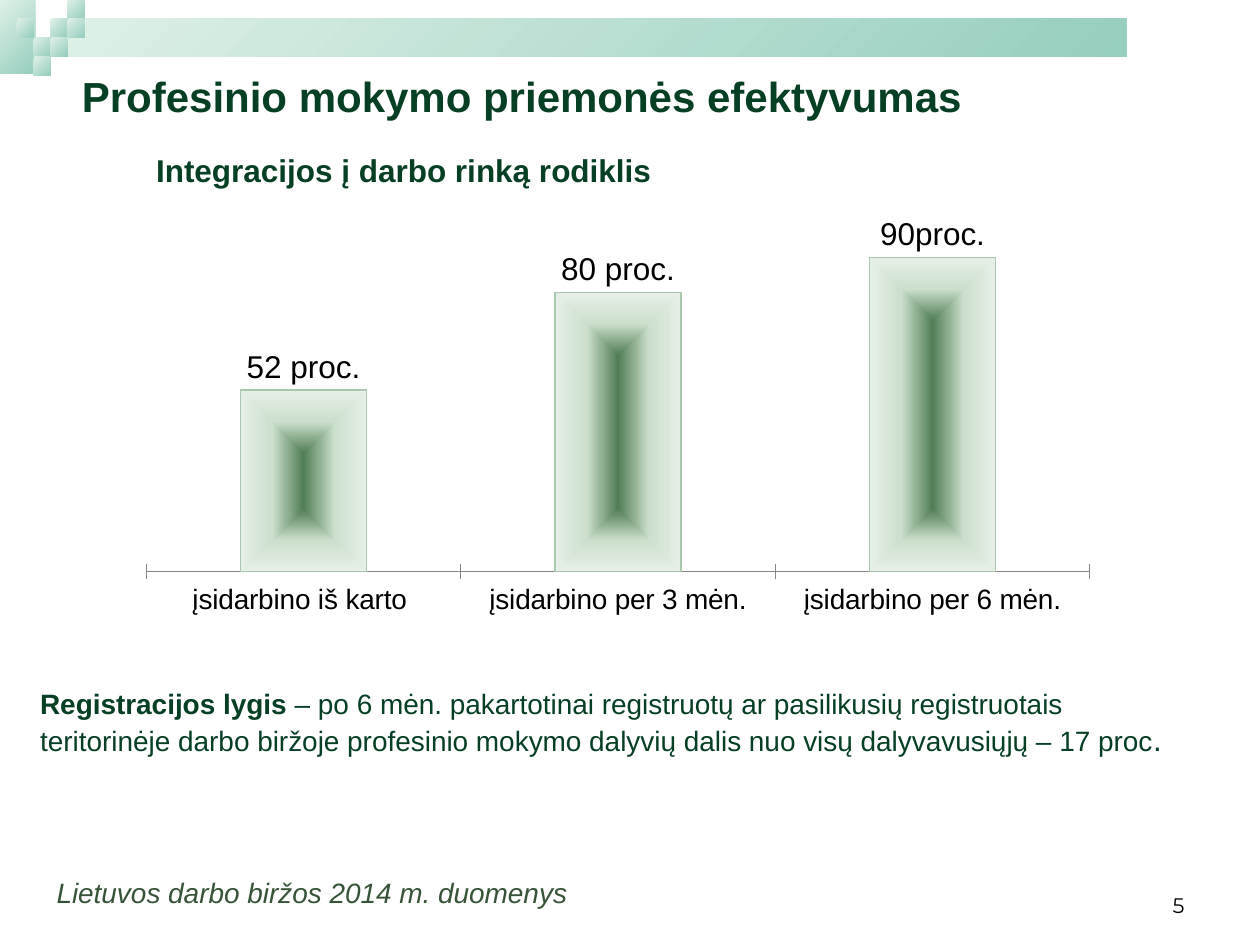
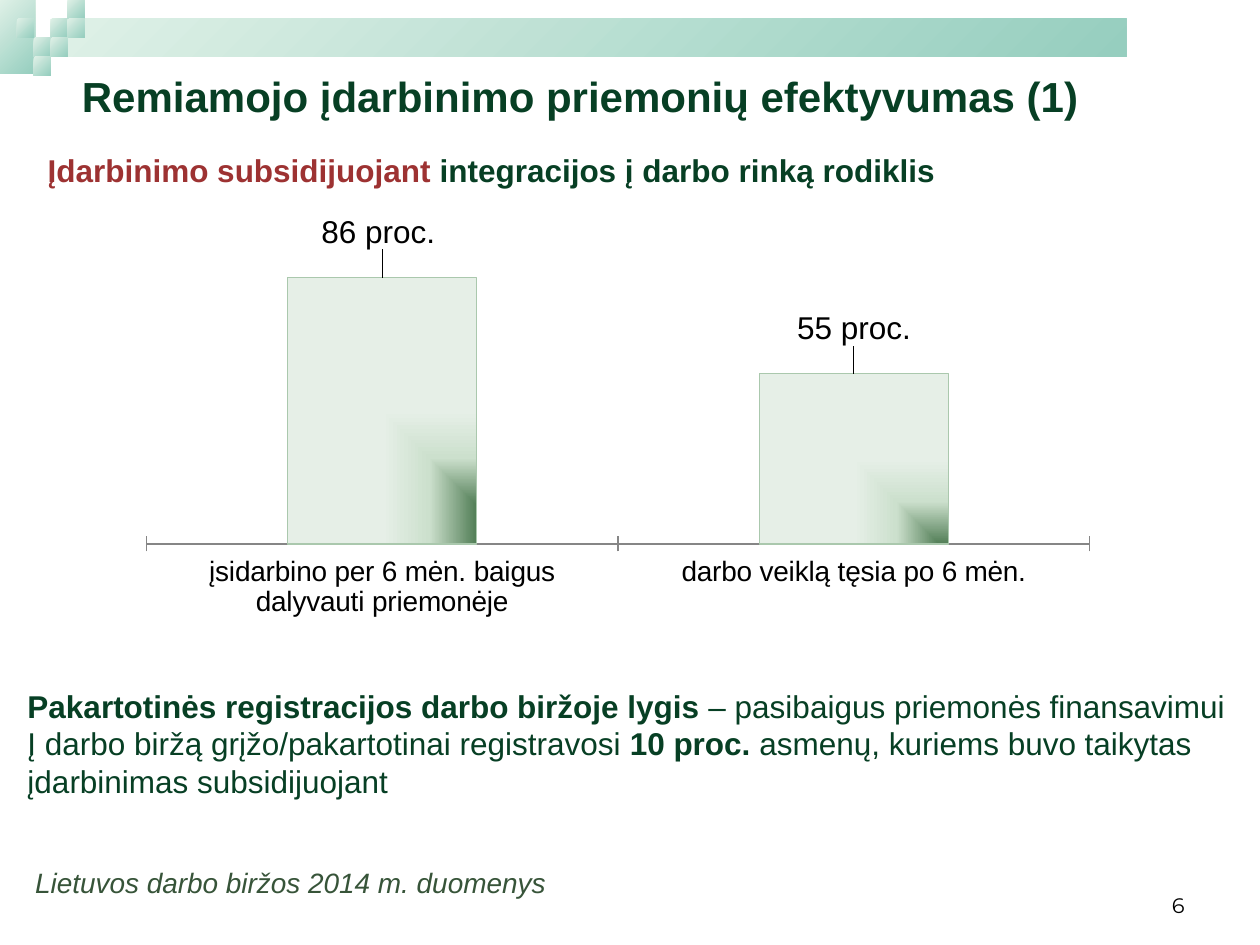
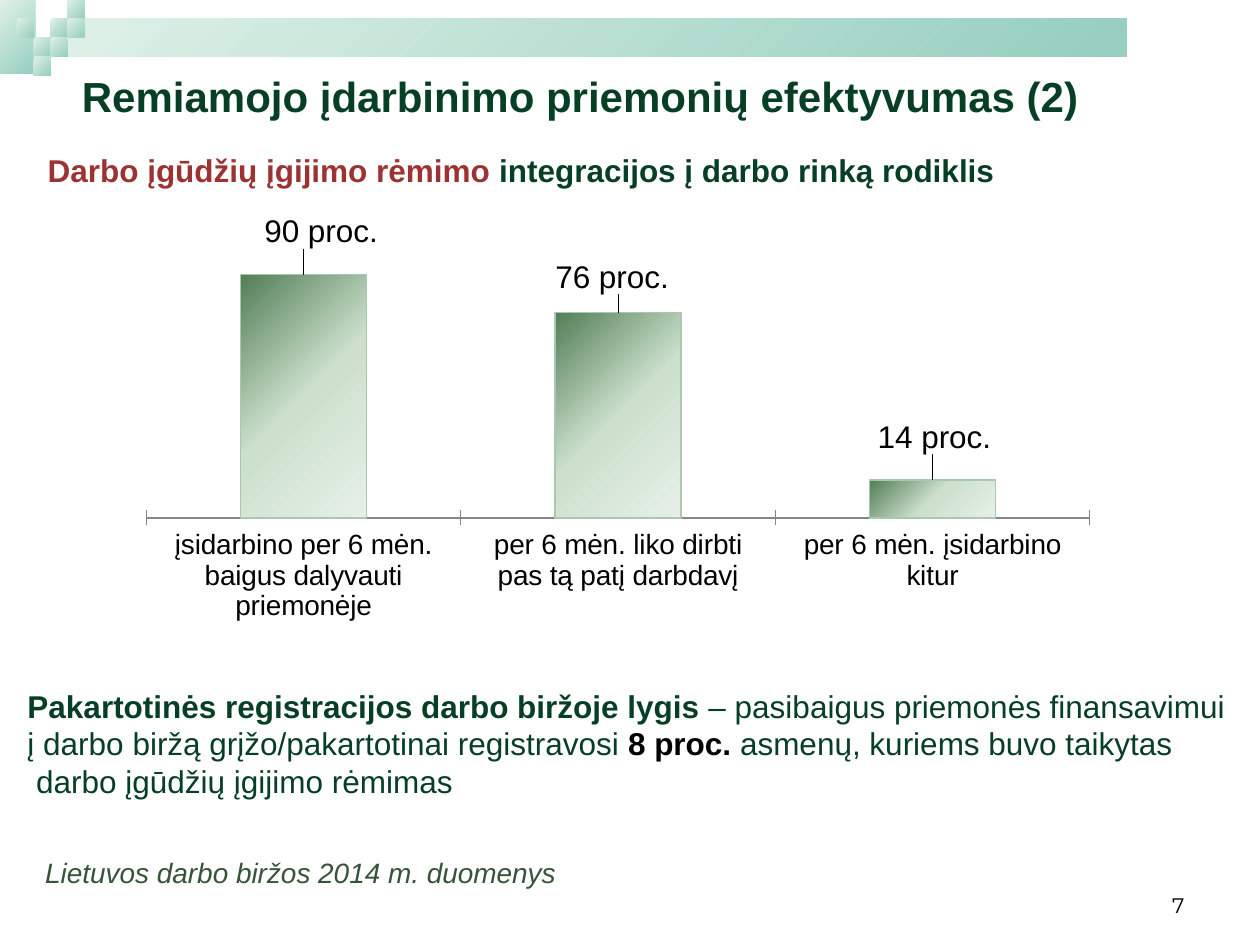
import pptx
import pptx.chart.data
import pptx.dml.color
import pptx.enum.chart
import pptx.enum.shapes
import pptx.enum.text
import pptx.oxml
import pptx.oxml.ns
import pptx.util

RGBColor = pptx.dml.color.RGBColor
Pt = pptx.util.Pt
qn = pptx.oxml.ns.qn

DARK_GREEN = RGBColor(0x07, 0x3F, 0x24)
SOURCE_GREEN = RGBColor(0x37, 0x54, 0x39)
RED = RGBColor(0x9D, 0x32, 0x32)
BLACK = RGBColor(0, 0, 0)
AXIS_GRAY = RGBColor(0x86, 0x86, 0x86)
BAR_LINE = RGBColor(0xAA, 0xC8, 0xAD)
BAND_STOPS = [(0, RGBColor(0xDF, 0xF1, 0xE7)), (100, RGBColor(0x96, 0xCE, 0xBF))]
BAR_STOPS = [(0, RGBColor(0x52, 0x7E, 0x56)), (50, RGBColor(0xCC, 0xE0, 0xCD)),
             (100, RGBColor(0xE6, 0xEF, 0xE7))]

DIAGONAL = '<a:lin ang="2700000" scaled="0"/>'
FROM_CENTRE = ('<a:path path="shape"><a:fillToRect l="50000" t="50000" '
               'r="50000" b="50000"/></a:path>')
FROM_CORNER = '<a:path path="rect"><a:fillToRect l="100000" t="100000"/></a:path>'
NO_LEADER_LINES = (
    f'<c:extLst {pptx.oxml.ns.nsdecls("c")}>'
    '<c:ext uri="{CE6537A1-D6FC-4f65-9D91-7224C49458BB}" '
    'xmlns:c15="http://schemas.microsoft.com/office/drawing/2012/chart">'
    '<c15:showLeaderLines val="0"/></c:ext></c:extLst>')

FONT = "Arial"
COLUMNS, ROWS = 100, 75
FIRST_NUMBER = 5
SOURCE = "Lietuvos darbo biržos 2014 m. duomenys"
INDICATOR = "integracijos į darbo rinką rodiklis"
BOLD = {"bold": True}


def paint_gradient(owner, fill, stops, shade):
    """Fill a part of owner (shape or chart) with stops along the given shade."""
    fill.gradient()
    gradient = next(owner.element.iter(qn("a:gradFill")))
    colours = "".join(f'<a:gs pos="{pos * 1000}"><a:srgbClr val="{rgb}"/></a:gs>'
                      for pos, rgb in stops)
    gradient.getparent().replace(gradient, pptx.oxml.parse_xml(
        f'<a:gradFill {pptx.oxml.ns.nsdecls("a")} rotWithShape="1">'
        f'<a:gsLst>{colours}</a:gsLst>{shade}</a:gradFill>'))


def manual_layout(target="", **percents):
    """Return a chart layout; values are percents of the chart's size."""
    parts = "".join(f'<c:{name} val="{percent / 100:.4f}"/>'
                    for name, percent in percents.items())
    return pptx.oxml.parse_xml(f'<c:layout {pptx.oxml.ns.nsdecls("c")}>'
                               f'<c:manualLayout>{target}{parts}</c:manualLayout></c:layout>')


def style_font(font, size=None, color=None, bold=None, italic=None, name=None):
    if size:
        font.size = Pt(size)
    if color is not None:
        font.color.rgb = color
    if name:
        font.name = name
    if bold is not None:
        font.bold = bold
    if italic is not None:
        font.italic = italic


class Deck:
    def __init__(self):
        self.prs = pptx.Presentation()
        self.prs.slide_width = pptx.util.Inches(10)
        self.prs.slide_height = pptx.util.Inches(7.5)
        self.layout = self.prs.slide_layouts[5]
        title = self.layout.placeholders[0]
        title.left, title.top, title.width, title.height = self.box(5.5, 4.45, 84.4, 6.3)
        self.s = None

    def box(self, col, row, cols, rows):
        dx, dy = self.prs.slide_width / COLUMNS, self.prs.slide_height / ROWS
        return int(col * dx), int(row * dy), int(cols * dx), int(rows * dy)

    def slide(self, title):
        self.s = self.prs.slides.add_slide(self.layout)
        number = FIRST_NUMBER + len(self.prs.slides) - 1
        if number == FIRST_NUMBER:
            self.band()
        tf = self.s.shapes.title.text_frame
        tf.text = title
        tf.auto_size = pptx.enum.text.MSO_AUTO_SIZE.NONE
        tf.vertical_anchor = pptx.enum.text.MSO_ANCHOR.MIDDLE
        p = tf.paragraphs[0]
        p.alignment = pptx.enum.text.PP_ALIGN.LEFT
        style_font(p.font, 24, DARK_GREEN, bold=True, name=FONT)
        tf = self.text((71.7, 68.3, 23.3, 5), [[str(number)]], grow=False,
                       size=12, color=BLACK, name="Montserrat")
        tf.vertical_anchor = pptx.enum.text.MSO_ANCHOR.BOTTOM
        tf.paragraphs[0].alignment = pptx.enum.text.PP_ALIGN.RIGHT

    def band(self):
        """Draw the top band and its mosaic, then move them to the shared layout."""
        cell_w, cell_h = 1.34, 1.5
        mosaic = [(3, 1), (4, 0), (4, 1), (2, 2), (1, 1), (3, 2), (2, 3)]
        boxes = [(0, 0, 2.8, 5.8), (4, 1.5, 85.4, 3)]
        boxes += [(c * cell_w, r * cell_h, cell_w, cell_h) for c, r in mosaic]
        for index, place in enumerate(boxes):
            sp = self.s.shapes.add_shape(pptx.enum.shapes.MSO_SHAPE.RECTANGLE,
                                         *self.box(*place))
            sp.shadow.inherit = False
            sp.line.fill.background()
            paint_gradient(sp, sp.fill, BAND_STOPS, DIAGONAL)
            self.layout.shapes.element.insert(2 + index, sp.element)

    def text(self, place, lines, grow=True, indents=(), **style):
        """Add lines of runs; a run is a string or a (string, font style) pair."""
        tf = self.s.shapes.add_textbox(*self.box(*place)).text_frame
        tf.word_wrap = not grow
        if grow:
            tf.auto_size = pptx.enum.text.MSO_AUTO_SIZE.SHAPE_TO_FIT_TEXT
        for index, line in enumerate(lines):
            p = tf.add_paragraph() if index else tf.paragraphs[0]
            if index in indents:
                p._p.get_or_add_pPr().set("marL", str(Pt(5)))
            style_font(p.font, **{"name": FONT, "color": DARK_GREEN, **style})
            for run in line:
                text, override = (run, {}) if isinstance(run, str) else run
                r = p.add_run()
                r.text = text
                style_font(r.font, **override)
        return tf

    def source(self, col, row):
        self.text((col, row, 43.1, 3.7), [[SOURCE]],
                  size=16, color=SOURCE_GREEN, italic=True)

    def chart(self, bars, shade, plot_top, plot_height):
        """Draw columns from (category, value, label, label shift) rows."""
        data = pptx.chart.data.CategoryChartData()
        data.categories = [bar[0] for bar in bars]
        data.add_series("Series 1", [bar[1] for bar in bars])
        enum = pptx.enum.chart
        chart = self.s.shapes.add_chart(enum.XL_CHART_TYPE.COLUMN_CLUSTERED,
                                        *self.box(10.1, 17, 78, 32.4), data).chart
        style_font(chart.font, 18, BLACK, name=FONT)
        chart.has_legend = chart.has_title = False

        values, categories = chart.value_axis, chart.category_axis
        values.minimum_scale, values.maximum_scale = 0, 100
        values.has_major_gridlines = values.visible = False
        categories.major_tick_mark = enum.XL_TICK_MARK.CROSS
        categories.format.line.color.rgb = AXIS_GRAY
        categories.format.line.width = Pt(0.75)
        style_font(categories.tick_labels.font, 16, BLACK, name=FONT)

        plot = chart.plots[0]
        plot.gap_width, plot.vary_by_categories = 150, False
        series = plot.series[0]
        paint_gradient(chart, series.format.fill, BAR_STOPS, shade)
        series.format.line.color.rgb = BAR_LINE
        series.format.line.width = Pt(0.75)
        self.bar_labels(chart, series, bars)

        area = next(chart.element.iter(qn("c:plotArea")))
        for old in area.findall(qn("c:layout")):
            area.remove(old)
        area.insert(0, manual_layout(
            '<c:layoutTarget val="inner"/><c:xMode val="edge"/><c:yMode val="edge"/>',
            x=1.95, y=plot_top, w=96, h=plot_height))

    def bar_labels(self, chart, series, bars):
        position = pptx.enum.chart.XL_LABEL_POSITION.OUTSIDE_END
        series.data_labels.show_value = True
        for point, (_, _, text, _) in enumerate(bars):
            label = series.points[point].data_label
            r = label.text_frame.paragraphs[0].add_run()
            r.text = text
            style_font(r.font, 18, BLACK, name=FONT)
            label.position = position
        for dlbl, (_, _, _, (x, y)) in zip(chart.element.iter(qn("c:dLbl")), bars):
            if x or y:
                dlbl.insert(1, manual_layout(x=x, y=y))
        labels = next(chart.element.iter(qn("c:dLbls")))
        for leader in labels.findall(qn("c:showLeaderLines")):
            labels.remove(leader)
        labels.append(pptx.oxml.parse_xml(NO_LEADER_LINES))


def main():
    deck = Deck()

    deck.slide("Profesinio mokymo priemonės efektyvumas")
    deck.chart([("įsidarbino iš karto ", 52, "52 proc.", (0, 0)),
                ("įsidarbino per 3 mėn.", 80, "80 proc.", (0, 0)),
                ("įsidarbino per 6 mėn.", 90, "90proc.", (0, 0))],
               FROM_CENTRE, 2, 85.6)
    deck.text((11.4, 11.5, 43.1, 4), [["Integracijos į darbo rinką rodiklis"]],
              size=18, bold=True)
    deck.text((2.2, 54, 92.8, 6.7), [
        [("Registracijos lygis ", BOLD),
         "– po 6 mėn. pakartotinai registruotų ar pasilikusių registruotais"],
        ["teritorinėje darbo biržoje profesinio mokymo dalyvių dalis "
         "nuo visų dalyvavusiųjų – 17 proc", (".", {"size": 18})]], size=16)
    deck.source(3.5, 69)

    supported = [
        ("Remiamojo įdarbinimo priemonių efektyvumas (1)",
         [("įsidarbino per 6 mėn. baigus dalyvauti priemonėje", 86, "86 proc.", (-0.4, -5.7)),
          ("darbo veiklą tęsia po 6 mėn.", 55, "55 proc.", (0, -5.5))],
         (FROM_CORNER, 4.75, 76), "Įdarbinimo subsidijuojant ", 73.1,
         "Į", ("10 proc. ", BOLD), "įdarbinimas subsidijuojant", (), (1.8, 68.2)),
        ("Remiamojo įdarbinimo priemonių efektyvumas (2)",
         [("įsidarbino per 6 mėn. baigus dalyvauti priemonėje", 90, "90 proc.", (1.8, -5)),
          ("per 6 mėn. liko dirbti pas tą patį darbdavį", 76, "76 proc.", (-0.6, -3.2)),
          ("per 6 mėn. įsidarbino kitur", 14, "14 proc.", (0.2, -5))],
         (DIAGONAL, 7.65, 66.6), "Darbo įgūdžių įgijimo rėmimo ", 78.7,
         "į", ("8 proc. ", {"bold": True, "color": BLACK}),
         "darbo įgūdžių įgijimo rėmimas", (2,), (2.6, 67.4)),
    ]
    for (title, bars, look, measure, width, into, share, ending,
         indents, source_place) in supported:
        deck.slide(title)
        deck.chart(bars, *look)
        deck.text((2.8, 11.5, width, 4), [[(measure, {"color": RED}), INDICATOR]],
                  size=18, bold=True)
        deck.text((1.2, 54, 97.6, 10.1), [
            [("Pakartotinės registracijos darbo biržoje lygis ", BOLD),
             "– pasibaigus priemonės finansavimui"],
            [f"{into} darbo biržą grįžo/pakartotinai registravosi ", share,
             "asmenų, kuriems buvo taikytas"],
            [ending]], indents=indents, size=18)
        deck.source(*source_place)

    deck.prs.save("out.pptx")


if __name__ == "__main__":
    main()
